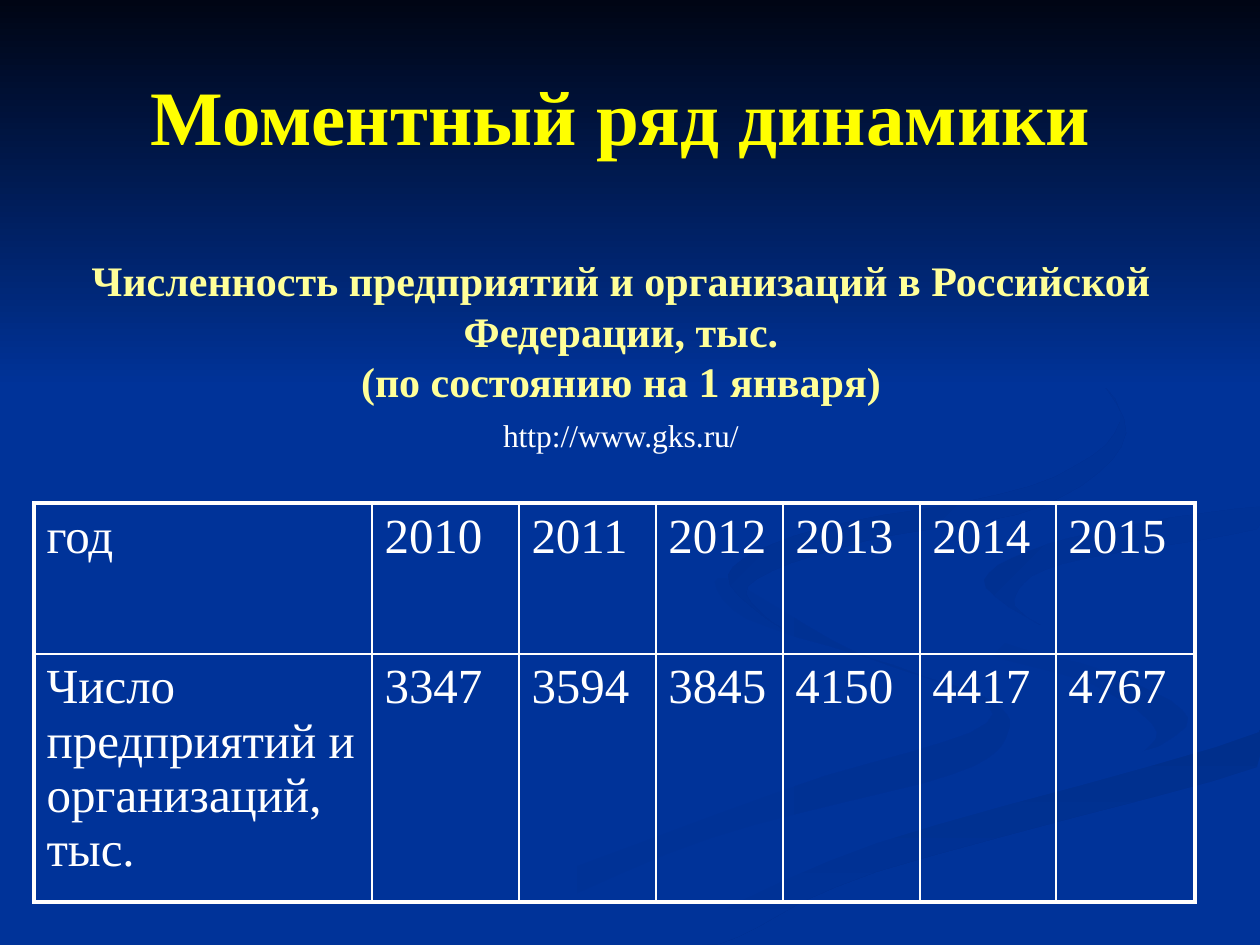
from lxml import etree
from pptx import Presentation
from pptx import util as u
from pptx.dml.color import RGBColor
from pptx.enum import shapes, text
from pptx.oxml.ns import qn

SCALE = 9144000 / 1260
FONT = "Times New Roman"
BLUE, WHITE = "003399", "FFFFFF"
CURVE_STEPS = 6

HEADING = [
    ("Моментный ряд динамики", dict(size=44, color="FFFF00", bold=True)),
    ("Численность предприятий и организаций в Российской Федерации, тыс.",
     dict(size=24, color="FFFF99", bold=True, before=53, line=29)),
    ("(по состоянию на 1 января)", dict(size=24, color="FFFF99", bold=True, line=29)),
    ("http://www.gks.ru/", dict(size=18, color=WHITE, line=27)),
]
ROWS = [
    ["год", "2010", "2011", "2012", "2013", "2014", "2015"],
    ["Число предприятий и организаций, тыс.", "3347", "3594", "3845", "4150", "4417", "4767"],
]
COLUMN_WIDTHS = [338, 147, 137, 127, 137, 136, 139]
ROW_HEIGHTS = [151, 248]

RIBBONS = [
    ((BLUE, "003193"), 0, [
        (984, 697), (859, 654), (725, 578), (747, 619), (917, 674), (987, 723),
        (776, 793), (378, 944), (455, 944), (711, 838), (953, 774), (1008, 732)]),
    ((BLUE, "003193"), 45, [
        (1188, 718), (1096, 668), (955, 627), (912, 585), (965, 645),
        (1094, 685), (1157, 732), (1126, 762)]),
    (("002F8C", BLUE), 90, [
        (634, 944), (719, 944), (876, 872), (1257, 767), (1257, 732),
        (963, 815), (794, 873)]),
    ((BLUE,), 0, [
        (914, 585), (999, 641), (1140, 680), (1184, 735), (936, 810), (601, 944),
        (654, 941), (877, 843), (1259, 732), (1259, 678), (1068, 634), (985, 580),
        (1071, 538), (1259, 507), (1259, 488), (993, 532)]),
    (("003091", BLUE), 45, [
        (984, 580), (1041, 625), (1014, 600), (1062, 564), (1257, 529),
        (1257, 507), (1070, 538)]),
    (("002F8E", BLUE), 45, [
        (861, 542), (1040, 507), (1126, 433), (1062, 346), (960, 294), (1066, 352),
        (1120, 422), (1031, 486), (818, 529), (728, 575), (784, 630), (748, 586)]),
]


def px(*lengths):
    return [u.Emu(round(length * SCALE)) for length in lengths]


def rgb(value):
    return RGBColor.from_string(value)


def paint(shape, colors, angle=0):
    shape.shadow.inherit = False
    shape.line.fill.background()
    if len(colors) == 1:
        shape.fill.solid()
        shape.fill.fore_color.rgb = rgb(colors[0])
        return
    shape.fill.gradient()
    shape.fill.gradient_angle = -angle % 360
    for stop, color, position in zip(shape.fill.gradient_stops, colors, (0, 1)):
        stop.color.rgb = rgb(color)
        stop.position = position


def smooth_outline(points):
    outline = []
    for index, start in enumerate(points):
        before = points[index - 1]
        end, after = (points[(index + step) % len(points)] for step in (1, 2))
        for step in range(CURVE_STEPS):
            t = step / CURVE_STEPS
            outline.append(tuple(
                b + t * (c - a + t * (2 * a - 5 * b + 4 * c - d + t * (3 * (b - c) + d - a))) / 2
                for a, b, c, d in zip(before, start, end, after)))
    return [(min(x, 1260), min(y, 945)) for x, y in outline]


def write(paragraph, words, size, color=WHITE, bold=False, align=None, before=0, line=None):
    run = paragraph.add_run()
    run.text = words
    run.font.name, run.font.size, run.font.bold = FONT, u.Pt(size), bold
    run.font.color.rgb = rgb(color)
    paragraph.alignment = align
    paragraph.space_before = u.Pt(before)
    if line:
        paragraph.line_spacing = u.Pt(line)


def set_borders(cell, widths):
    properties = cell._tc.get_or_add_tcPr()
    for index, (side, width) in enumerate(zip("LRTB", widths)):
        border = etree.Element(qn("a:ln" + side), w=str(u.Pt(width)))
        fill = etree.SubElement(border, qn("a:solidFill"))
        etree.SubElement(fill, qn("a:srgbClr"), val=WHITE)
        properties.insert(index, border)


def add_background(slide):
    slide.background.fill.solid()
    slide.background.fill.fore_color.rgb = rgb(BLUE)
    for colors, angle, points in RIBBONS:
        outline = smooth_outline(points)
        builder = slide.shapes.build_freeform(*outline[0], scale=SCALE)
        builder.add_line_segments(outline[1:], close=True)
        paint(builder.convert_to_shape(), colors, angle)
    sky = slide.shapes.add_shape(shapes.MSO_SHAPE.RECTANGLE, *px(0, 0, 1260, 388))
    paint(sky, ("000514", BLUE), 90)


def add_heading(slide):
    title = slide.shapes.title
    slide.shapes._spTree.append(title._element)
    title.left, title.top, title.width, title.height = px(54, 45, 1134, 416)
    frame = title.text_frame
    frame.auto_size = text.MSO_AUTO_SIZE.NONE
    frame.vertical_anchor = text.MSO_ANCHOR.TOP
    frame.margin_top, = px(24)
    for index, (words, style) in enumerate(HEADING):
        paragraph = frame.add_paragraph() if index else frame.paragraphs[0]
        write(paragraph, words, align=text.PP_ALIGN.CENTER, **style)


def add_data(slide):
    last_row, last_column = len(ROWS) - 1, len(COLUMN_WIDTHS) - 1
    place = px(34, 503, sum(COLUMN_WIDTHS), sum(ROW_HEIGHTS))
    table = slide.shapes.add_table(len(ROWS), len(COLUMN_WIDTHS), *place).table
    table.first_row = table.horz_banding = False
    for column, width in zip(table.columns, px(*COLUMN_WIDTHS)):
        column.width = width
    for row, height in zip(table.rows, px(*ROW_HEIGHTS)):
        row.height = height
    for r, values in enumerate(ROWS):
        for c, value in enumerate(values):
            cell = table.cell(r, c)
            cell.fill.background()
            write(cell.text_frame.paragraphs[0], value, size=28)
            outer = (c == 0, c == last_column, r == 0, r == last_row)
            set_borders(cell, [2.25 if edge else 1 for edge in outer])


def main():
    presentation = Presentation()
    presentation.slide_width, presentation.slide_height = px(1260, 945)
    slide = presentation.slides.add_slide(presentation.slide_layouts[5])
    add_background(slide)
    add_heading(slide)
    add_data(slide)
    presentation.save("out.pptx")


if __name__ == "__main__":
    main()
